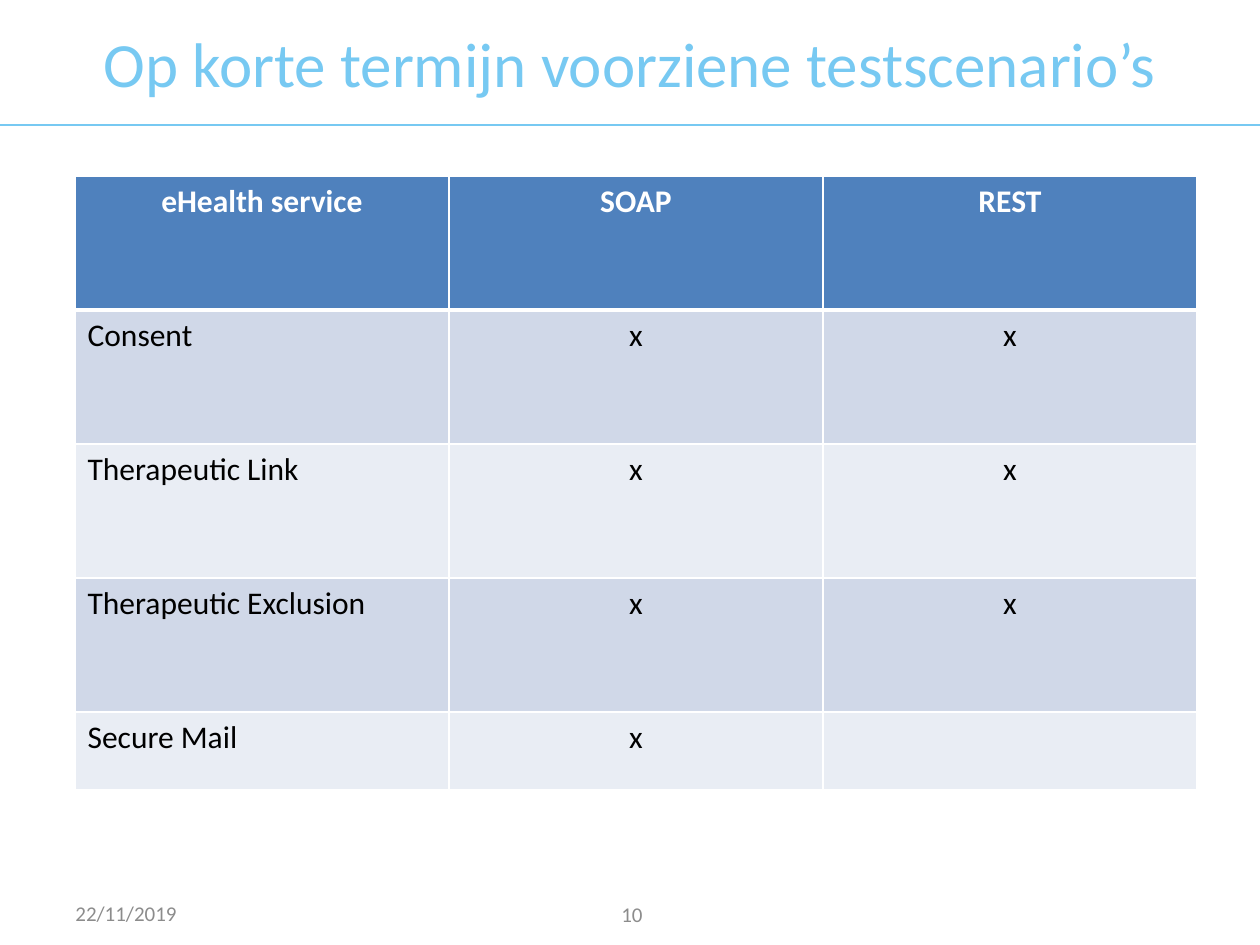
from lxml import etree
from pptx import Presentation
from pptx.dml.color import RGBColor
from pptx.enum import shapes, text
from pptx.oxml.ns import qn
from pptx.util import Emu, Pt

SKY = RGBColor(0x77, 0xC9, 0xF2)
BLUE = RGBColor(0x4F, 0x81, 0xBD)
BANDS = [RGBColor(0xD0, 0xD8, 0xE8), RGBColor(0xE9, 0xED, 0xF4)]
GREY = RGBColor(0x8C, 0x8C, 0x8C)
WHITE = RGBColor(0xFF, 0xFF, 0xFF)
BLACK = RGBColor(0, 0, 0)
LEFT, CENTER = text.PP_ALIGN.LEFT, text.PP_ALIGN.CENTER

TEXTS = [
    ("Op korte termijn voorziene testscenario’s", (0, 0, 1260, 125), CENTER, 36, SKY),
    ("22/11/2019", (63, 888, 294, 50), LEFT, 12, GREY),
    ("10", (485, 889, 294, 50), CENTER, 12, GREY),
]
ROWS = [
    ("eHealth service", "SOAP", "REST"),
    ("Consent", "x", "x"),
    ("Therapeutic Link", "x", "x"),
    ("Therapeutic Exclusion", "x", "x"),
    ("Secure Mail", "x", ""),
]
TABLE_LEFT, TABLE_TOP, COLUMN_WIDTH = 75, 176, 374
ROW_HEIGHTS = [134, 134, 134, 134, 78]
RULE_Y = 125


def px(length):
    return Emu(round(length * 914400 / 126))


def write(frame, words, align, size, color, bold=False):
    para = frame.paragraphs[0]
    para.alignment = align
    span = para.add_run()
    span.text = words
    span.font.color.rgb = color
    for name, value in {"name": "Calibri", "size": Pt(size), "bold": bold}.items():
        setattr(span.font, name, value)


def add_border(cell, side, points):
    properties = cell._tc.get_or_add_tcPr()
    line = etree.SubElement(properties, qn(f"a:ln{side}"), w=str(Pt(points)))
    fill = etree.SubElement(line, qn("a:solidFill"))
    etree.SubElement(fill, qn("a:srgbClr"), val=str(WHITE))


def add_rule(page):
    rule = page.shapes.add_connector(
        shapes.MSO_CONNECTOR.STRAIGHT, 0, px(RULE_Y), px(1260), px(RULE_Y))
    rule.line.color.rgb = SKY
    rule.line.width = Pt(1.5)
    etree.SubElement(rule._element.spPr, qn("a:effectLst"))


def add_text(page, words, area, align, size, color):
    box = page.shapes.add_textbox(*map(px, area))
    box.text_frame.word_wrap = True
    box.text_frame.vertical_anchor = text.MSO_ANCHOR.MIDDLE
    write(box.text_frame, words, align, size, color)


def add_services(page):
    columns = len(ROWS[0])
    area = (TABLE_LEFT, TABLE_TOP, COLUMN_WIDTH * columns, sum(ROW_HEIGHTS))
    table = page.shapes.add_table(len(ROWS), columns, *map(px, area)).table
    for column in table.columns:
        column.width = px(COLUMN_WIDTH)
    for r, (row, height) in enumerate(zip(ROWS, ROW_HEIGHTS)):
        table.rows[r].height = px(height)
        header = r == 0
        for c, words in enumerate(row):
            cell = table.cell(r, c)
            top, bottom = 3 if r == 1 else 1, 3 if header else 1
            for side, points in {"L": 1, "R": 1, "T": top, "B": bottom}.items():
                add_border(cell, side, points)
            cell.fill.solid()
            cell.fill.fore_color.rgb = BLUE if header else BANDS[(r - 1) % 2]
            if words:
                align = CENTER if header or c else LEFT
                write(cell.text_frame, words, align, 18, WHITE if header else BLACK, header)


def main():
    deck = Presentation()
    deck.slide_width, deck.slide_height = px(1260), px(945)
    page = deck.slides.add_slide(deck.slide_layouts[6])
    add_rule(page)
    add_services(page)
    for item in TEXTS:
        add_text(page, *item)
    deck.save("out.pptx")


if __name__ == "__main__":
    main()
